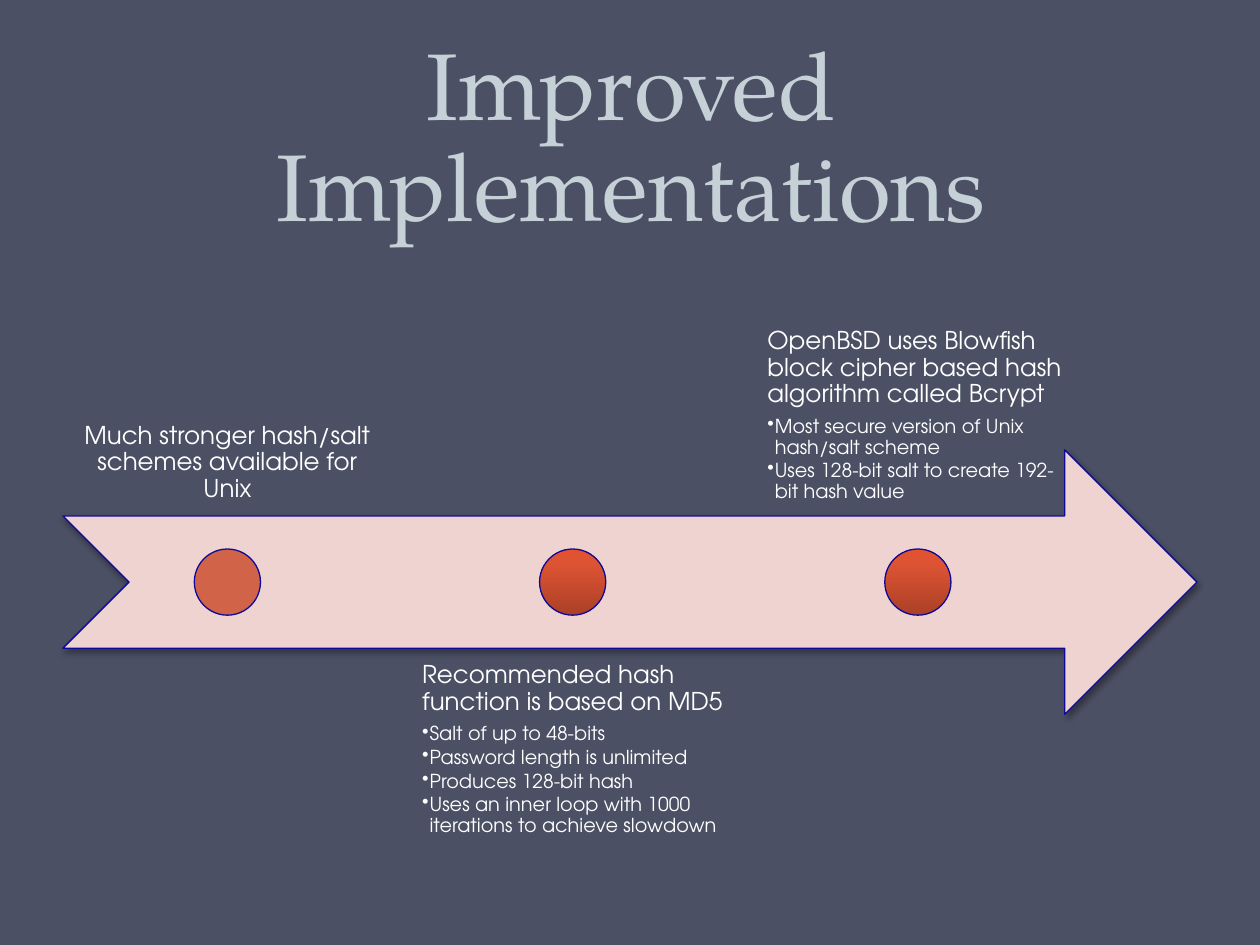
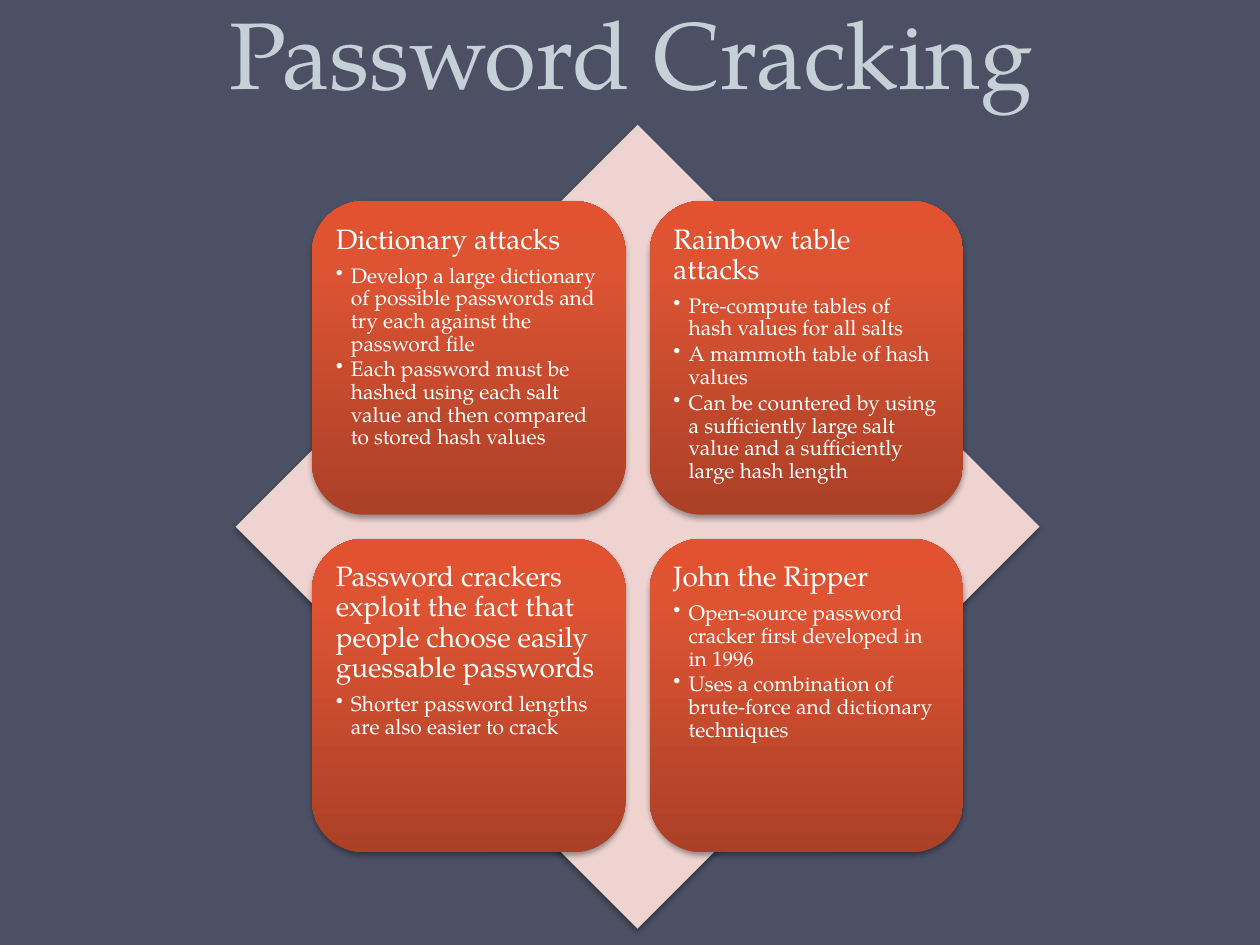
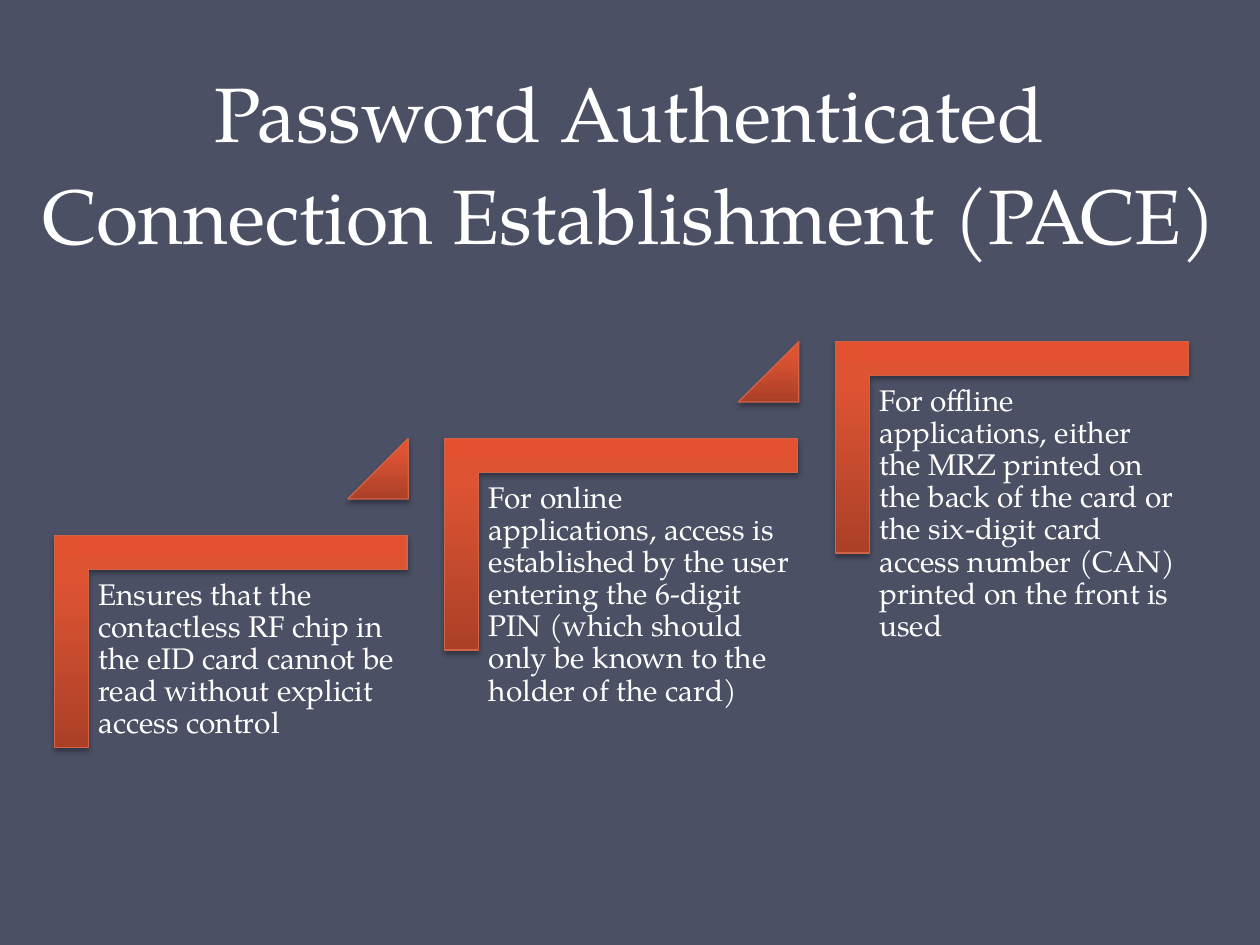
"""Build three slides on stored passwords, password cracking and PACE."""
from dataclasses import dataclass

from lxml import etree
from pptx import Presentation
from pptx.dml.color import RGBColor
from pptx.enum.shapes import MSO_SHAPE
from pptx.enum.text import MSO_ANCHOR, MSO_AUTO_SIZE, PP_ALIGN
from pptx.oxml import parse_xml
from pptx.oxml.ns import nsdecls, qn
from pptx.util import Inches, Pt

ARROW, DOT = MSO_SHAPE.NOTCHED_RIGHT_ARROW, MSO_SHAPE.OVAL
DIAMOND, CARD = MSO_SHAPE.DIAMOND, MSO_SHAPE.ROUNDED_RECTANGLE
CORNER, TRIANGLE = MSO_SHAPE.CORNER, MSO_SHAPE.ISOSCELES_TRIANGLE
TOP, BOTTOM = MSO_ANCHOR.TOP, MSO_ANCHOR.BOTTOM
LEFT, CENTER = PP_ALIGN.LEFT, PP_ALIGN.CENTER
NO_FIT = MSO_AUTO_SIZE.NONE


@dataclass(frozen=True)
class Theme:
    """Colours, fonts and type sizes shared by the slides."""
    background: str = "4B5064"
    title: str = "C5D1D7"
    text: str = "FFFFFF"
    pale: str = "EED3D0"
    accent: str = "D16349"
    outline: str = "0E0A99"
    gradient: tuple = ((0, "AB4027"), (80, "DE5433"), (100, "E35230"))
    serif: str = "TeX Gyre Pagella"
    sans: str = "TeX Gyre Adventor"
    title_size: int = 54
    long_title_size: int = 44
    title_leading: int = 58
    timeline_sizes: tuple = (14, 11)
    card_sizes: tuple = (16, 12)
    step_size: int = 17


THEME = Theme()
SLIDE_WIDTH, SLIDE_HEIGHT = 10, 7.5

MILESTONES = [
    ("Much stronger hash/salt schemes available for Unix", []),
    ("Recommended hash function is based on MD5", [
        "Salt of up to 48-bits",
        "Password length is unlimited",
        "Produces 128-bit hash",
        "Uses an inner loop with 1000 iterations to achieve slowdown",
    ]),
    ("OpenBSD uses Blowfish block cipher based hash algorithm called Bcrypt", [
        "Most secure version of Unix hash/salt scheme",
        "Uses 128-bit salt to create 192-bit hash value",
    ]),
]

ATTACKS = [
    ("Dictionary attacks", [
        "Develop a large dictionary of possible passwords and try each against the password file",
        "Each password must be hashed using each salt value and then compared to stored hash values",
    ]),
    ("Rainbow table attacks", [
        "Pre-compute tables of hash values for all salts",
        "A mammoth table of hash values",
        "Can be countered by using a sufficiently large salt value and a sufficiently large hash length",
    ]),
    ("Password crackers exploit the fact that people choose easily guessable passwords", [
        "Shorter password lengths are also easier to crack",
    ]),
    ("John the Ripper", [
        "Open-source password cracker first developed in in 1996",
        "Uses a combination of brute-force and dictionary techniques",
    ]),
]

ACCESS_STEPS = [
    "Ensures that the contactless RF chip in the eID card cannot be read without explicit "
    "access control",
    "For online applications, access is established by the user entering the 6-digit PIN "
    "(which should only be known to the holder of the card)",
    "For offline applications, either the MRZ printed on the back of the card or the six-digit "
    "card access number (CAN) printed on the front is used",
]


def write(para, text, size, font=THEME.serif, color=THEME.text, align=LEFT,
          leading=0.9, after=0.0, bullet_indent=None):
    """Put text in a paragraph; after is a share of the type size."""
    para.alignment = align
    para.line_spacing = leading
    para.space_after = Pt(round(size * after, 1))
    if bullet_indent:
        para.level = 1
        properties = para._p.get_or_add_pPr()
        indent = Inches(bullet_indent)
        properties.set("marL", str(indent))
        properties.set("indent", str(-indent))
        etree.SubElement(properties, qn("a:buChar")).set("char", "•")
    span = para.add_run()
    span.text = text
    span.font.size = Pt(size)
    span.font.name = font
    span.font.color.rgb = RGBColor.from_string(color)


def add_text(slide, bounds, heading, points=(), sizes=(12, 12), font=THEME.serif,
             inset=0.07, anchor=TOP, align=LEFT, indent=0.12):
    """Add a text box with a heading and bulleted points."""
    frame = slide.shapes.add_textbox(*map(Inches, bounds)).text_frame
    frame.word_wrap = True
    frame.auto_size = NO_FIT
    frame.vertical_anchor = anchor
    frame.margin_left = frame.margin_right = Inches(inset)
    frame.margin_top = frame.margin_bottom = Inches(inset)
    write(frame.paragraphs[0], heading, sizes[0], font=font, align=align, after=0.35)
    for point in points:
        write(frame.add_paragraph(), point, sizes[1], font=font, after=0.15,
              bullet_indent=indent)


def add_part(slide, kind, bounds, fill=None, line=None, shadow=True, rotation=0,
             adjustments=()):
    """Add a preset shape, with the theme gradient when no fill is given."""
    shape = slide.shapes.add_shape(kind, *map(Inches, bounds))
    shape.rotation = rotation
    for index, value in enumerate(adjustments):
        shape.adjustments[index] = value
    properties = shape._element.spPr
    if fill:
        shape.fill.solid()
        shape.fill.fore_color.rgb = RGBColor.from_string(fill)
    else:
        stops = "".join(f'<a:gs pos="{share * 1000}"><a:srgbClr val="{color}"/></a:gs>'
                        for share, color in THEME.gradient)
        properties.find(qn("a:prstGeom")).addnext(parse_xml(
            f'<a:gradFill {nsdecls("a")} rotWithShape="0"><a:gsLst>{stops}</a:gsLst>'
            '<a:lin ang="16200000" scaled="0"/></a:gradFill>'))
    if line:
        shape.line.color.rgb = RGBColor.from_string(line)
        shape.line.width = Pt(0.75)
    else:
        shape.line.fill.background()
    shape.shadow.inherit = False
    if shadow:
        properties.find(qn("a:effectLst")).append(parse_xml(
            f'<a:outerShdw {nsdecls("a")} blurRad="{Pt(3.1)}" dist="{Pt(1.8)}" dir="5400000" '
            'rotWithShape="0"><a:srgbClr val="000000"><a:alpha val="35000"/></a:srgbClr>'
            '</a:outerShdw>'))


def add_page(deck, title, bounds, size=THEME.title_size, color=THEME.title):
    """Add a title-only slide and format its title."""
    slide = deck.slides.add_slide(deck.slide_layouts[5])
    box = slide.shapes.title
    box.left, box.top, box.width, box.height = map(Inches, bounds)
    frame = box.text_frame
    frame.word_wrap = True
    frame.auto_size = NO_FIT
    frame.vertical_anchor = BOTTOM
    write(frame.paragraphs[0], title, size, color=color, align=CENTER,
          leading=Pt(THEME.title_leading))
    return slide


def build_timeline(deck):
    """Place milestones alternately above and below an arrow."""
    slide = add_page(deck, "Improved Implementations", (0.51, 0.21, 9, 1.75))
    left, top, width, height = 0.5, 3.57, 9, 2.1
    column, pitch, dot = 2.61, 2.74, height / 4
    add_part(slide, ARROW, (left, top, width, height), fill=THEME.pale, line=THEME.outline)
    for index, (heading, points) in enumerate(MILESTONES):
        x = left + index * pitch
        below = index % 2
        add_text(slide, (x, 5.15 if below else 2, column, height), heading, points,
                 sizes=THEME.timeline_sizes, font=THEME.sans, inset=0.11, indent=0.06,
                 anchor=TOP if below else BOTTOM, align=LEFT if points else CENTER)
        add_part(slide, DOT, (x + (column - dot) / 2, top + (height - dot) / 2, dot, dot),
                 fill=None if index else THEME.accent, line=THEME.outline, shadow=False)


def build_matrix(deck):
    """Place four cards in a square grid over a diamond."""
    slide = add_page(deck, "Password Cracking", (0.51, -0.27, 9, 1.18))
    left, top, side = 1.87, 0.99, 6.38
    card, pitch, padding = 2.49, 2.68, 0.12
    margin = (side - card - pitch) / 2
    add_part(slide, DIAMOND, (left, top, side, side), fill=THEME.pale)
    for index, (heading, points) in enumerate(ATTACKS):
        row, column = divmod(index, 2)
        x, y = left + margin + column * pitch, top + margin + row * pitch
        add_part(slide, CARD, (x, y, card, card))
        inner = card - 2 * padding
        add_text(slide, (x + padding, y + padding, inner, inner), heading, points,
                 sizes=THEME.card_sizes)


def build_stairs(deck):
    """Place access steps on a rising staircase."""
    slide = add_page(deck, "Password Authenticated Connection Establishment (PACE)",
                     (0, 0.36, SLIDE_WIDTH, 1.75), size=THEME.long_title_size,
                     color=THEME.text)
    run, rise = 3.1, 0.77
    for index, step in enumerate(ACCESS_STEPS):
        x, y = index * run, -index * rise
        add_part(slide, CORNER, (0.99 + x, 3.69 + y, 1.68, 2.8), line=THEME.accent,
                 rotation=90, adjustments=(0.161, 0.161))
        add_text(slide, (0.71 + x, 4.53 + y, 2.53, 2.22), step,
                 sizes=(THEME.step_size, THEME.step_size))
        if index < len(ACCESS_STEPS) - 1:
            add_part(slide, TRIANGLE, (2.76 + x, 3.48 + y, 0.48, 0.48), line=THEME.accent,
                     adjustments=(1,))


def main():
    """Build and save the deck."""
    deck = Presentation()
    deck.slide_width, deck.slide_height = Inches(SLIDE_WIDTH), Inches(SLIDE_HEIGHT)
    fill = deck.slide_master.background.fill
    fill.solid()
    fill.fore_color.rgb = RGBColor.from_string(THEME.background)
    for build in (build_timeline, build_matrix, build_stairs):
        build(deck)
    deck.save("out.pptx")


if __name__ == "__main__":
    main()
